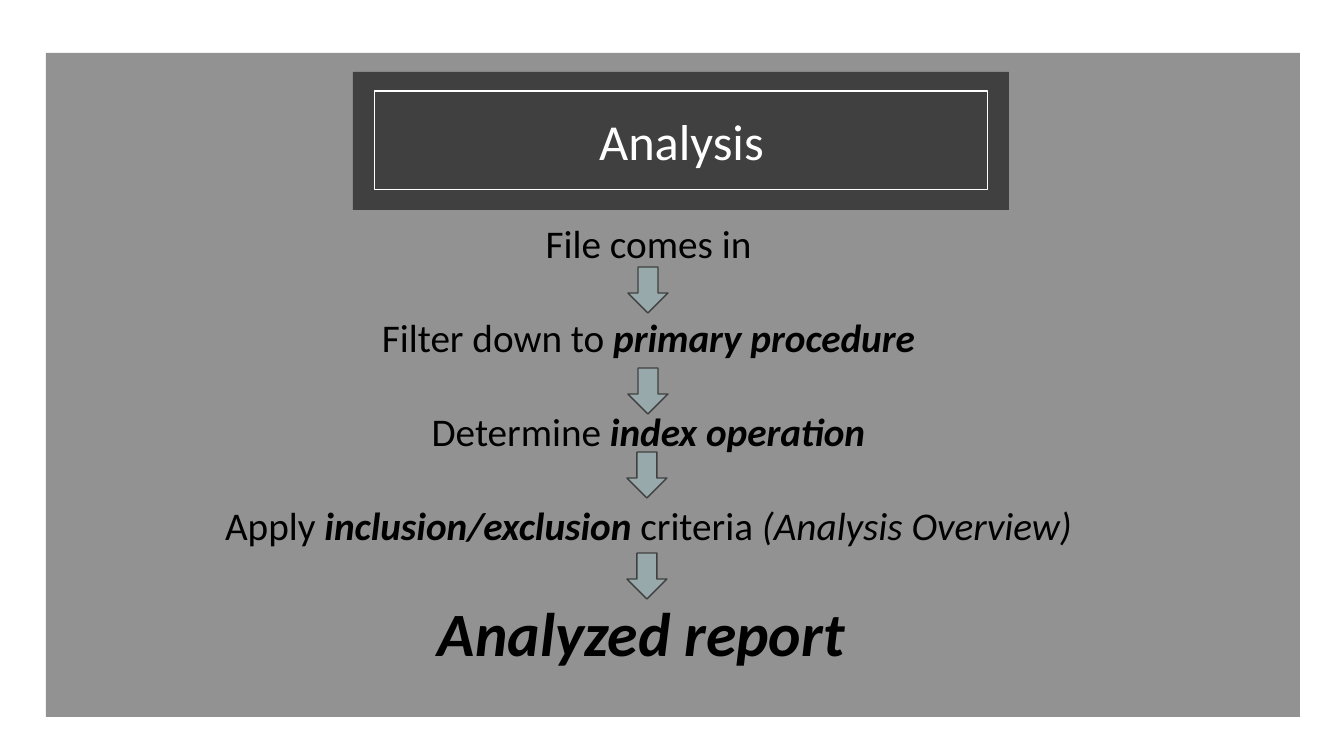
"""Build the Analysis slide: a title plate above a five-step flow with down arrows."""
from lxml import etree
from pptx import Presentation
from pptx.dml.color import RGBColor
from pptx.enum.shapes import MSO_SHAPE
from pptx.enum.text import MSO_ANCHOR, MSO_AUTO_SIZE, PP_ALIGN
from pptx.oxml.ns import qn
from pptx.util import Emu, Pt

PIXEL = 914400 / 100.8
BLACK = RGBColor(0x00, 0x00, 0x00)
WHITE = RGBColor(0xFF, 0xFF, 0xFF)
CHARCOAL = RGBColor(0x40, 0x40, 0x40)
GRAY = RGBColor(0x59, 0x59, 0x59)
SAGE = RGBColor(0x97, 0xA9, 0xAA)

PLAIN = {"size": Pt(28), "bold": False, "italic": False}
STRONG = {"size": Pt(28), "bold": True, "italic": True}
ASIDE = {"size": Pt(28), "bold": False, "italic": True}
RESULT = {"size": Pt(44), "bold": True, "italic": True}
TITLE = {"size": Pt(36)}

STEPS = [
    [("File comes in", PLAIN)],
    [("Filter down to ", PLAIN), ("primary procedure", STRONG)],
    [("Determine ", PLAIN), ("index operation", STRONG)],
    [
        ("Apply ", PLAIN),
        ("inclusion/exclusion", STRONG),
        (" criteria ", PLAIN),
        ("(Analysis Overview)", ASIDE),
    ],
    [("Analyzed report ", RESULT)],
]
ARROWS = [(628, 267), (628, 368), (627, 452), (627, 553)]


def add_box(kind, bounds, fill, line=None, width=1):
    shape = slide.shapes.add_shape(kind, *[Emu(round(n * PIXEL)) for n in bounds])
    shape.shadow.inherit = False
    shape.fill.solid()
    shape.fill.fore_color.rgb = fill
    if line is None:
        shape.line.fill.background()
    else:
        shape.line.color.rgb = line
        shape.line.width = Pt(width)
    return shape


def add_runs(paragraph, pieces, color):
    paragraph.alignment = PP_ALIGN.CENTER
    for text, format_values in pieces:
        run = paragraph.add_run()
        run.text = text
        run.font.name = "Calibri"
        run.font.color.rgb = color
        for name, value in format_values.items():
            setattr(run.font, name, value)


presentation = Presentation()
presentation.slide_width = Emu(round(1344 * PIXEL))
presentation.slide_height = Emu(round(756 * PIXEL))
slide = presentation.slides.add_slide(presentation.slide_layouts[6])

panel = add_box(MSO_SHAPE.RECTANGLE, (46, 53, 1254, 664), GRAY)
panel_color = panel.fill._xPr.find(qn("a:solidFill"))[0]
etree.SubElement(panel_color, qn("a:alpha"), val="65000")

add_box(MSO_SHAPE.RECTANGLE, (353, 72, 656, 138), CHARCOAL)
title = add_box(MSO_SHAPE.RECTANGLE, (375, 91, 613, 99), CHARCOAL, WHITE, 0.75)
title.text_frame.vertical_anchor = MSO_ANCHOR.MIDDLE
add_runs(title.text_frame.paragraphs[0], [("Analysis", TITLE)], WHITE)

steps_box = slide.shapes.add_textbox(*[Emu(round(n * PIXEL)) for n in (66, 214, 1165, 465)])
steps_frame = steps_box.text_frame
steps_frame.word_wrap = True
steps_frame.auto_size = MSO_AUTO_SIZE.SHAPE_TO_FIT_TEXT
for index, pieces in enumerate(STEPS):
    paragraph = steps_frame.add_paragraph() if index else steps_frame.paragraphs[0]
    paragraph.space_before = Pt(33.5 if index else 0)
    add_runs(paragraph, pieces, BLACK)

for left, top in ARROWS:
    add_box(MSO_SHAPE.DOWN_ARROW, (left, top, 40, 46), SAGE, CHARCOAL)

presentation.save("out.pptx")
